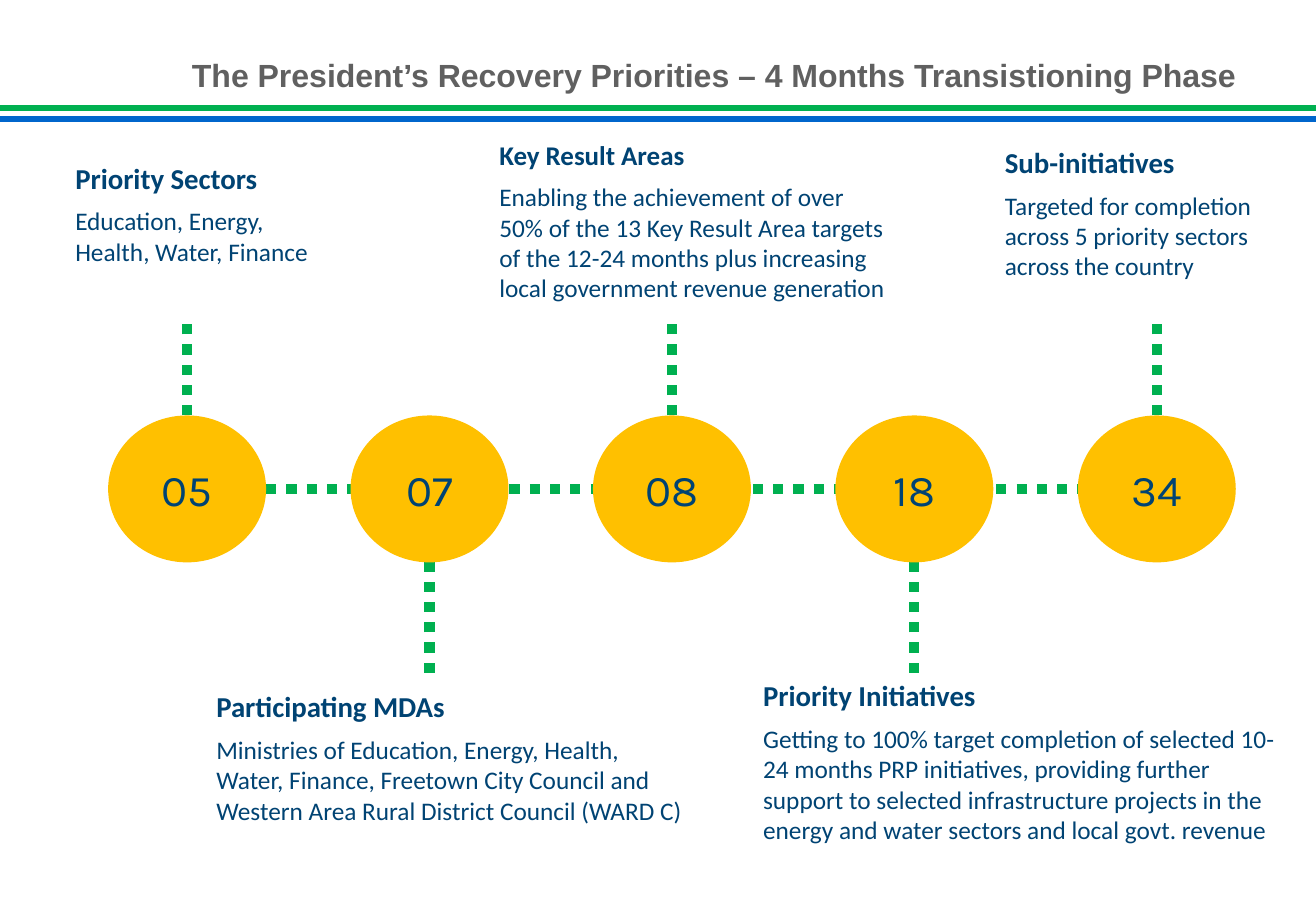
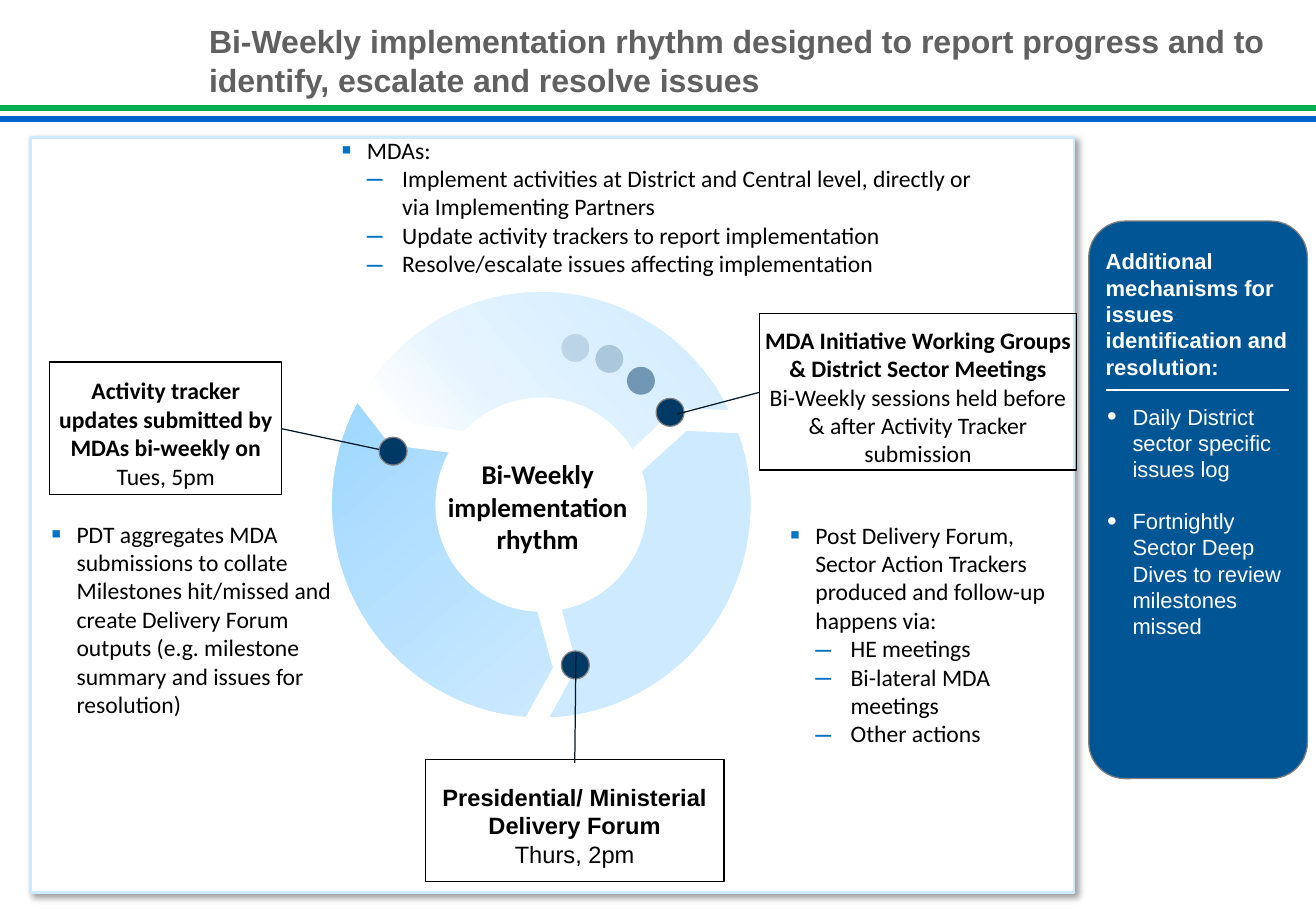
from math import cos, radians, sin

from lxml import etree
from pptx import Presentation
from pptx.dml.color import RGBColor
from pptx.enum.dml import MSO_LINE
from pptx.enum.shapes import MSO_CONNECTOR, MSO_SHAPE
from pptx.enum.text import MSO_ANCHOR, PP_ALIGN
from pptx.oxml.ns import qn
from pptx.util import Inches, Pt

GREEN = RGBColor(0x00, 0xB0, 0x50)
BAND_BLUE = RGBColor(0x00, 0x66, 0xCC)
TITLE_GREY = RGBColor(0x60, 0x60, 0x60)
AMBER = RGBColor(0xFF, 0xC0, 0x00)
NAVY = RGBColor(0x00, 0x43, 0x73)
DOT_NAVY = RGBColor(0x00, 0x39, 0x63)
LEADER_NAVY = RGBColor(0x00, 0x1B, 0x2E)
SIDEBAR_BLUE = RGBColor(0x00, 0x56, 0x94)
BULLET_BLUE = RGBColor(0x00, 0x73, 0xC6)
PALE_BLUE = RGBColor(0xCD, 0xEA, 0xFF)
PALER_BLUE = RGBColor(0xE5, 0xF4, 0xFF)
NEAR_WHITE = RGBColor(0xFC, 0xFE, 0xFF)
SKY_BLUE = RGBColor(0x9F, 0xD7, 0xFF)
EDGE_GREY = RGBColor(0x80, 0x80, 0x80)
BLACK = RGBColor(0, 0, 0)
WHITE = RGBColor(0xFF, 0xFF, 0xFF)

RECT = MSO_SHAPE.RECTANGLE
ROUNDED = MSO_SHAPE.ROUNDED_RECTANGLE
OVAL = MSO_SHAPE.OVAL
STRAIGHT = MSO_CONNECTOR.STRAIGHT
DOTTED = MSO_LINE.ROUND_DOT
TOP, MIDDLE, BOTTOM = MSO_ANCHOR.TOP, MSO_ANCHOR.MIDDLE, MSO_ANCHOR.BOTTOM
LEFT, CENTER = PP_ALIGN.LEFT, PP_ALIGN.CENTER

SLIDE_W, SLIDE_H = 10.83, 7.5
PADDING = (0.11, 0.05, 0.11, 0.05)
NO_PADDING = (0, 0, 0, 0)
BOX_PADDING = (0, 0.16, 0, 0.08)
SQUARE = ("▪", 0.21, 0.21, 125, BULLET_BLUE)
DASH = ("–", 0.5, 0.29, 120, BULLET_BLUE)
ROUND = ("•", 0.22, 0.21, 125, WHITE)


def add_child(parent, tag, **attributes):
    return etree.SubElement(parent, qn(tag), {k: str(v) for k, v in attributes.items()})


def add_line(slide, start, end, color, width, dash=None):
    line = slide.shapes.add_connector(STRAIGHT, *map(Inches, start + end))
    add_child(line._element.spPr, "a:effectLst")
    line.line.color.rgb = color
    line.line.width = Pt(width)
    if dash:
        line.line.dash_style = dash


def style(shape, fill=None, edge=None, width=0.75):
    shape.shadow.inherit = False
    if fill is None:
        shape.fill.background()
    else:
        shape.fill.solid()
        shape.fill.fore_color.rgb = fill
    if edge is None:
        shape.line.fill.background()
    else:
        shape.line.color.rgb = edge
        shape.line.width = Pt(width)


def add_shape(slide, kind, box, fill=None, edge=None, width=0.75):
    shape = slide.shapes.add_shape(kind, *map(Inches, box))
    style(shape, fill, edge, width)
    return shape


def add_bullet(paragraph, bullet):
    char, margin, hanging, percent, color = bullet
    props = paragraph._p.get_or_add_pPr()
    props.set("marL", str(Inches(margin)))
    props.set("indent", str(-Inches(hanging)))
    add_child(add_child(props, "a:buClr"), "a:srgbClr", val=color)
    add_child(props, "a:buSzPct", val=percent * 1000)
    add_child(props, "a:buFont", typeface="Arial")
    add_child(props, "a:buChar", char=char)


def write(frame, paragraphs, font, color, padding=NO_PADDING, anchor=TOP,
          align=LEFT, after=0, gap=0):
    frame.word_wrap = True
    frame.vertical_anchor = anchor
    (frame.margin_left, frame.margin_top,
     frame.margin_right, frame.margin_bottom) = map(Inches, padding)
    for index, (bullet, runs) in enumerate(paragraphs):
        paragraph = frame.add_paragraph() if index else frame.paragraphs[0]
        if bullet:
            add_bullet(paragraph, bullet)
        paragraph.alignment = align
        paragraph.space_after = Pt(after)
        if index:
            paragraph.space_before = Pt(gap)
        for position, (text, size, bold) in enumerate(runs):
            if position:
                paragraph.add_line_break()
            run = paragraph.add_run()
            run.text = text
            run.font.name = font
            run.font.size = Pt(size)
            run.font.bold = bold
            run.font.color.rgb = color


def add_text(slide, box, paragraphs, font, color, **layout):
    write(slide.shapes.add_textbox(*map(Inches, box)).text_frame,
          paragraphs, font, color, **layout)


def add_framed_slide(prs, title, title_box, anchor):
    slide = prs.slides.add_slide(prs.slide_layouts[6])
    for y, color in ((0.89, GREEN), (0.98, BAND_BLUE)):
        add_line(slide, (0, y), (SLIDE_W, y), color, 3.75)
    add_text(slide, title_box, [(None, [(title, 19, True)])], "Arial", TITLE_GREY,
             anchor=anchor)
    return slide


MILESTONES = [
    ("05", "Priority Sectors", 17.1, "Education, Energy, Health, Water, Finance",
     (0.51, 1.27, 2.37, 0.98)),
    ("07", "Participating MDAs", 17.1,
     "Ministries of Education, Energy, Health, Water, Finance, Freetown City Council "
     "and Western Area Rural District Council (WARD C)", (1.67, 5.62, 4.08, 1.24)),
    ("08", "Key Result Areas", 16,
     "Enabling the achievement of over 50% of the 13 Key Result Area targets of the "
     "12-24 months plus increasing local government revenue generation",
     (4, 1.09, 3.4, 1.47)),
    ("18", "Priority Initiatives", 17.1,
     "Getting to 100% target completion of selected 10-24 months PRP initiatives, "
     "providing further support to selected infrastructure projects in the energy and "
     "water sectors and local govt. revenue", (6.17, 5.53, 4.45, 1.49)),
    ("34", "Sub-initiatives", 17.1,
     "Targeted for completion across 5 priority sectors across the country",
     (8.16, 1.14, 2.7, 1.24)),
]


def add_timeline(slide, box):
    left, top, width, height = box
    disc = 1.3
    pitch = (width - disc) / (len(MILESTONES) - 1)
    middle = top + height / 2
    add_line(slide, (left + disc, middle), (left + width - disc, middle), GREEN, 6, DOTTED)
    for index, (number, heading, size, detail, text_box) in enumerate(MILESTONES):
        x = left + index * pitch
        center = x + disc / 2
        near, far = (top + height, top + height + 0.91) if index % 2 else (top, top - 0.8)
        start, end = (far, near) if index % 2 else (near, far)
        add_line(slide, (center, start), (center, end), GREEN, 6, DOTTED)
        circle = add_shape(slide, OVAL, (x, top, disc, height), AMBER)
        write(circle.text_frame, [(None, [(number, 26, False)])], "Karla", NAVY,
              padding=PADDING, anchor=MIDDLE, align=CENTER)
        add_text(slide, text_box,
                 [(None, [(heading, size, True)]), (None, [(detail, 15, False)])],
                 "Calibri", NAVY, padding=PADDING, after=6.4)


SEGMENTS = [
    ((214.3, 335.8), (1.12, -0.75), (221.8, 332.5), (-1.17, -0.64),
     [(0, PALE_BLUE), (65, PALER_BLUE), (87, NEAR_WHITE)], 140),
    ((90.2, -20.5), (1.18, -0.65), (82, -20), (0.25, 1.33), [(0, PALE_BLUE)], 0),
    ((93.4, 210.6), (-1.22, -0.53), (90, 213.4), (0.14, 1.35),
     [(0, SKY_BLUE), (100, PALE_BLUE)], 50),
]
DOTS = [(-1.34, -0.56, 15, 100), (0.95, -0.88, 15, 100)]
DOTS = [(-1.22, -0.44, 100), (1.06, -0.76, 100), (0.28, 1.32, 100),
        (0.82, -1.02, 48), (0.28, -1.29, 15), (0.56, -1.2, 22)]


def arc(center, radii, start, end, steps=40):
    angles = [radians(start + (end - start) * i / steps) for i in range(steps + 1)]
    return [(center[0] + radii[0] * cos(a), center[1] + radii[1] * sin(a)) for a in angles]


def set_gradient(shape, stops, angle):
    shape.fill.gradient()
    gradient = shape._element.spPr.find(qn("a:gradFill"))
    for child in list(gradient):
        gradient.remove(child)
    stop_list = add_child(gradient, "a:gsLst")
    for percent, color in stops:
        add_child(add_child(stop_list, "a:gs", pos=percent * 1000), "a:srgbClr", val=color)
    add_child(gradient, "a:lin", ang=angle * 60000, scaled=0)


def add_cycle(slide, box):
    left, top, width, height = box
    center = (left + width / 2, top + height / 2)
    outer = (width / 2, height / 2)
    inner = (0.83, 0.84)
    for outer_span, head, inner_span, tail, stops, angle in SEGMENTS:
        points = arc(center, outer, *outer_span)
        points.append((center[0] + head[0], center[1] + head[1]))
        points += arc(center, inner, *reversed(inner_span))
        points.append((center[0] + tail[0], center[1] + tail[1]))
        corners = [(Inches(x), Inches(y)) for x, y in points]
        builder = slide.shapes.build_freeform(*corners[0])
        builder.add_line_segments(corners[1:], close=True)
        segment = builder.convert_to_shape()
        style(segment, stops[0][1], WHITE, 6)
        if len(stops) > 1:
            set_gradient(segment, stops, angle)
    size = 0.23
    for dx, dy, opacity in DOTS:
        solid = opacity == 100
        dot = add_shape(slide, OVAL,
                        (center[0] + dx - size / 2, center[1] + dy - size / 2, size, size),
                        DOT_NAVY, EDGE_GREY if solid else None)
        if not solid:
            color = dot._element.spPr.find(qn("a:solidFill")).find(qn("a:srgbClr"))
            add_child(color, "a:alpha", val=opacity * 1000)
    label = [(None, [(word, 16, True)]) for word in ("Bi-Weekly", "implementation", "rhythm")]
    add_text(slide, (center[0] - 0.87, center[1] - 0.39, 1.68, 0.81), label,
             "Calibri", BLACK, anchor=MIDDLE, align=CENTER)


MEETINGS = [
    ((3.5, 6.25, 2.46, 1.01), "Arial", "Presidential/ Ministerial Delivery Forum",
     "Thurs, 2pm", None, (4.73, 6.28), (4.74, 5.37)),
    ((6.25, 2.58, 2.61, 1.29), "Calibri",
     "MDA Initiative Working Groups & District Sector Meetings",
     "Bi-Weekly sessions held before & after Activity Tracker submission", None,
     (5.57, 3.41), (6.25, 3.23)),
    ((0.41, 2.98, 1.91, 1.09), "Calibri",
     "Activity tracker updates submitted by MDAs bi-weekly on", "Tues, 5pm", WHITE,
     (2.32, 3.53), (3.12, 3.7)),
]
NOTES = [
    ((2.81, 1.11, 5.31, 1.18), "MDAs:",
     ["Implement activities at District and Central level, directly or via "
      "Implementing Partners",
      "Update activity trackers to report implementation",
      "Resolve/escalate issues affecting implementation"]),
    ((0.42, 4.27, 2.39, 1.65),
     "PDT aggregates MDA submissions to collate Milestones hit/missed and create "
     "Delivery Forum outputs (e.g. milestone summary and issues for resolution)", []),
    ((6.5, 4.28, 2.32, 1.88),
     "Post Delivery Forum, Sector Action Trackers produced and follow-up happens via:",
     ["HE meetings", "Bi-lateral MDA meetings", "Other actions"]),
]


def add_panel(slide, box):
    panel = add_shape(slide, RECT, box, WHITE, PALE_BLUE, 1.5)
    effects = panel._element.spPr.find(qn("a:effectLst"))
    shadow = add_child(effects, "a:outerShdw", blurRad=Pt(4), dist=Pt(3),
                       dir=45 * 60000, algn="tl", rotWithShape=0)
    add_child(add_child(shadow, "a:srgbClr", val=BLACK), "a:alpha", val=40000)


def add_meeting(slide, box, font, heading, timing, fill, start, end):
    meeting = add_shape(slide, RECT, box, fill, BLACK)
    write(meeting.text_frame, [(None, [(heading, 14, True), (timing, 14, False)])],
          font, BLACK, padding=BOX_PADDING, anchor=MIDDLE, align=CENTER)
    add_line(slide, start, end, LEADER_NAVY, 0.75)


def add_note(slide, box, lead, items):
    paragraphs = [(SQUARE, [(lead, 14, False)])]
    paragraphs += [(DASH, [(item, 14, False)]) for item in items]
    add_text(slide, box, paragraphs, "Calibri", BLACK, anchor=MIDDLE)


def add_sidebar(slide, box):
    left, top, width, height = box
    x = left + 0.14
    add_shape(slide, ROUNDED, box, SIDEBAR_BLUE, EDGE_GREY)
    add_line(slide, (x, top + 1.39), (x + 1.51, top + 1.39), WHITE, 0.75)
    heading = ("Additional", "mechanisms for issues identification and resolution:")
    add_text(slide, (x, top + 0.22, 1.7, 1.09),
             [(None, [(text, 13, True)]) for text in heading], "Arial", WHITE)
    mechanisms = ("Daily District sector specific issues log",
                  "Fortnightly Sector Deep Dives to review milestones missed")
    add_text(slide, (x, top + 1.5, 1.51, 2.19),
             [(ROUND, [(text, 13, False)]) for text in mechanisms], "Arial", WHITE, gap=15)


def main():
    prs = Presentation()
    prs.slide_width, prs.slide_height = Inches(SLIDE_W), Inches(SLIDE_H)

    priorities = add_framed_slide(
        prs, "The President’s Recovery Priorities – 4 Months Transistioning Phase",
        (1.58, 0.45, 9.04, 0.32), BOTTOM)
    add_timeline(priorities, (0.89, 3.42, 9.28, 1.21))

    rhythm = add_framed_slide(
        prs, "Bi-Weekly implementation rhythm designed to report progress and to "
        "identify, escalate and resolve issues", (1.72, 0.18, 8.72, 0.64), TOP)
    add_panel(rhythm, (0.25, 1.13, 8.59, 6.22))
    add_cycle(rhythm, (2.69, 2.36, 3.53, 3.59))
    for note in NOTES:
        add_note(rhythm, *note)
    for meeting in MEETINGS:
        add_meeting(rhythm, *meeting)
    add_sidebar(rhythm, (8.96, 1.82, 1.8, 4.59))

    prs.save("out.pptx")


if __name__ == "__main__":
    main()
